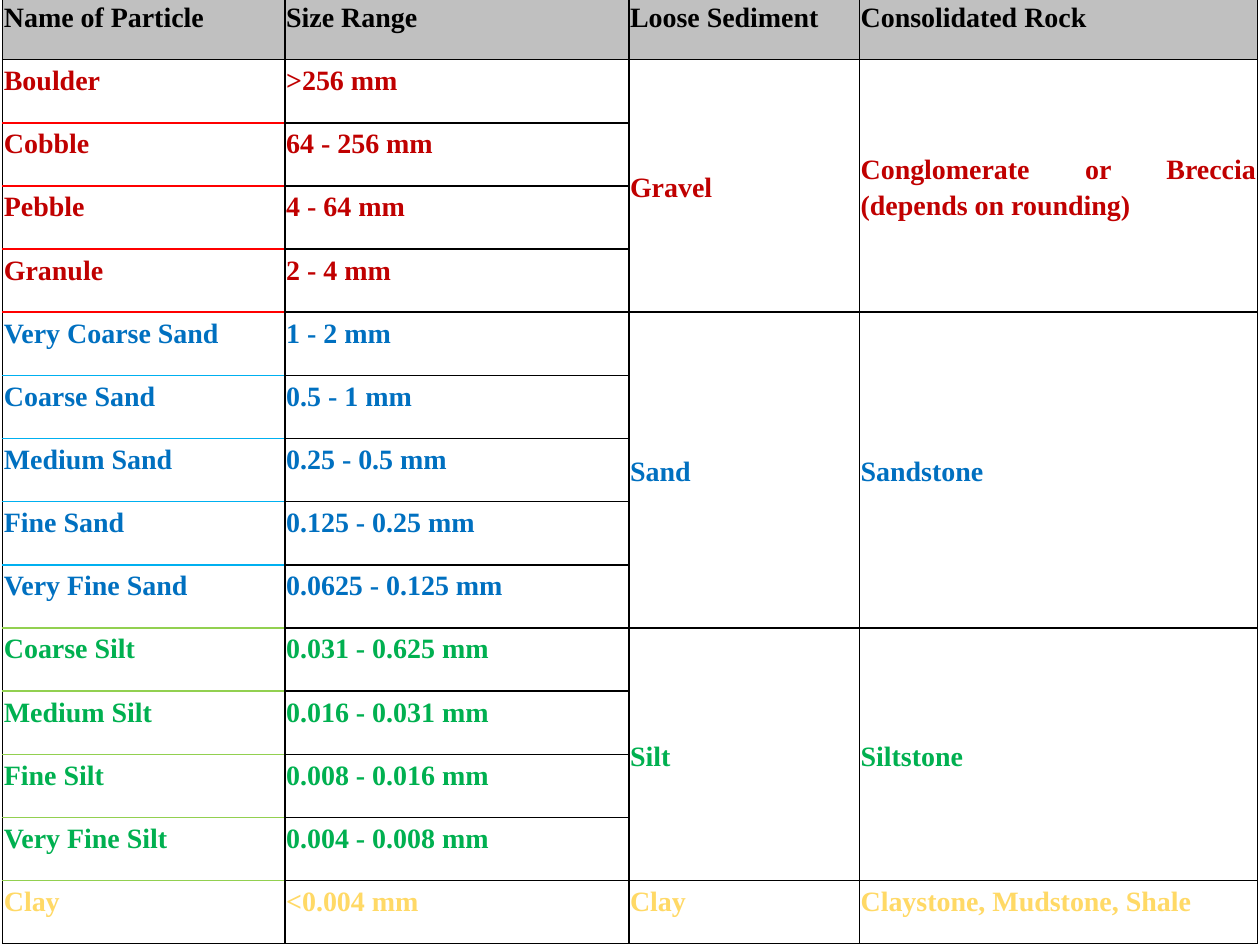
import pptx
import pptx.util
import pptx.dml.color
import pptx.enum.text
from lxml import etree
from pptx.oxml.ns import qn

Pt = pptx.util.Pt
RGB = pptx.dml.color.RGBColor
PP_ALIGN = pptx.enum.text.PP_ALIGN
ANCHOR = pptx.enum.text.MSO_ANCHOR

BLACK = RGB(0x00, 0x00, 0x00)
GREY = RGB(0xC0, 0xC0, 0xC0)
DARK_RED = RGB(0xC0, 0x00, 0x00)
RED = RGB(0xFF, 0x00, 0x00)
BLUE = RGB(0x00, 0x70, 0xC0)
SKY = RGB(0x00, 0xB0, 0xF0)
GREEN = RGB(0x00, 0xB0, 0x50)
LIME = RGB(0x92, 0xD0, 0x50)
GOLD = RGB(0xFF, 0xD9, 0x66)

# Content
HEADERS = ["Name of Particle", "Size Range", "Loose Sediment", "Consolidated Rock"]
GROUPS = [
    dict(sediment="Gravel", rock="Conglomerate or Breccia\v(depends on rounding)",
         color=DARK_RED, rule=RED, after=10,
         particles=[("Boulder", ">256 mm"), ("Cobble", "64 - 256 mm"),
                    ("Pebble", "4 - 64 mm"), ("Granule", "2 - 4 mm")]),
    dict(sediment="Sand", rock="Sandstone", color=BLUE, rule=SKY, after=0,
         particles=[("Very Coarse Sand", "1 - 2 mm"), ("Coarse Sand", "0.5 - 1 mm"),
                    ("Medium Sand", "0.25 - 0.5 mm"), ("Fine Sand", "0.125 - 0.25 mm"),
                    ("Very Fine Sand", "0.0625 - 0.125 mm")]),
    dict(sediment="Silt", rock="Siltstone", color=GREEN, rule=LIME, after=10,
         particles=[("Coarse Silt", "0.031 - 0.625 mm"), ("Medium Silt", "0.016 - 0.031 mm"),
                    ("Fine Silt", "0.008 - 0.016 mm"), ("Very Fine Silt", "0.004 - 0.008 mm")]),
    dict(sediment="Clay", rock="Claystone, Mudstone, Shale", color=GOLD, rule=BLACK, after=0,
         particles=[("Clay", "<0.004 mm")]),
]

# Layout
LEFT, TOP = 1.5, -2
COL_WIDTHS = [161.3, 196.5, 131.8, 227.5]
ROW_HEIGHT = 36.1
ROWS = 1 + sum(len(g["particles"]) for g in GROUPS)


def set_text(cell, text, color=BLACK, after=0, anchor=ANCHOR.TOP):
    cell.vertical_anchor = anchor
    p = cell.text_frame.paragraphs[0]
    p.text = text
    p.alignment = PP_ALIGN.JUSTIFY
    p.line_spacing = 1.15
    p.space_after = Pt(after)
    for r in p.runs:
        r.font.name = "Times New Roman"
        r.font.size = Pt(16)
        r.font.bold = True
        r.font.color.rgb = color


def set_borders(cell, top=BLACK, bottom=BLACK):
    tcPr = cell._tc.get_or_add_tcPr()
    sides = [("a:lnL", BLACK), ("a:lnR", BLACK), ("a:lnT", top), ("a:lnB", bottom)]
    for i, (tag, color) in enumerate(sides):
        ln = etree.Element(qn(tag), w=str(Pt(1)))
        fill = etree.SubElement(ln, qn("a:solidFill"))
        etree.SubElement(fill, qn("a:srgbClr"), val=str(color))
        tcPr.insert(i, ln)


prs = pptx.Presentation()
prs.slide_width, prs.slide_height = Pt(720), Pt(540)
s = prs.slides.add_slide(prs.slide_layouts[6])

# Empty grid
table = s.shapes.add_table(ROWS, len(HEADERS), Pt(LEFT), Pt(TOP),
                           Pt(sum(COL_WIDTHS)), Pt(ROWS * ROW_HEIGHT)).table
table.horz_banding = False
table.first_row = False
for col, width in zip(table.columns, COL_WIDTHS):
    col.width = Pt(width)
for row in table.rows:
    row.height = Pt(ROW_HEIGHT)
for cell in table.iter_cells():
    cell.margin_left = cell.margin_right = cell.margin_top = cell.margin_bottom = Pt(0.75)
    cell.fill.background()

# Header row
for c, header in enumerate(HEADERS):
    cell = table.cell(0, c)
    cell.fill.solid()
    cell.fill.fore_color.rgb = GREY
    set_text(cell, header, after=10)

# Particle rows, with sediment and rock merged over each group
rules = [BLACK]  # colour under each row of the first column
for g in GROUPS:
    first = len(rules)
    for name, size in g["particles"]:
        set_text(table.cell(len(rules), 0), name, color=g["color"])
        set_text(table.cell(len(rules), 1), size, color=g["color"])
        rules.append(g["rule"])
    last = len(rules) - 1
    if last > first:
        for c in (2, 3):
            table.cell(first, c).merge(table.cell(last, c))
    anchor = ANCHOR.MIDDLE if last > first else ANCHOR.TOP
    set_text(table.cell(first, 2), g["sediment"], color=g["color"],
             after=g["after"], anchor=anchor)
    set_text(table.cell(first, 3), g["rock"], color=g["color"], anchor=anchor)
# The rule between two groups takes the colour of the silt group below sand
rules[sum(len(g["particles"]) for g in GROUPS[:2])] = LIME

# Borders
for r in range(ROWS):
    for c in range(len(HEADERS)):
        if c == 0:
            set_borders(table.cell(r, c), top=rules[max(r - 1, 0)], bottom=rules[r])
        else:
            set_borders(table.cell(r, c))

prs.save("out.pptx")
